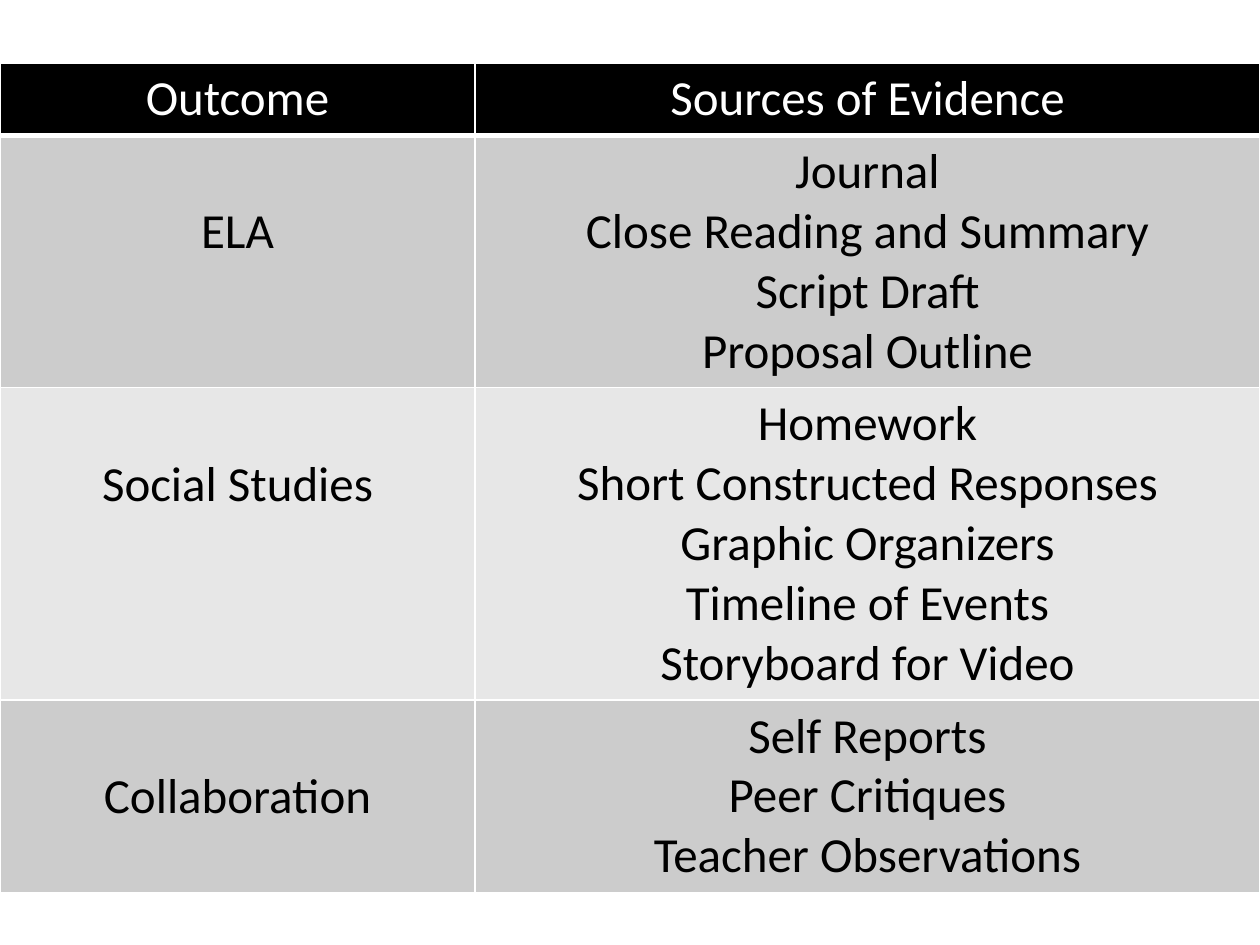
from dataclasses import dataclass

from pptx import Presentation
from pptx.dml.color import RGBColor
from pptx.enum.text import PP_ALIGN
from pptx.oxml import parse_xml
from pptx.oxml.ns import nsdecls
from pptx.slide import Slide
from pptx.util import Inches, Pt

COLORS = {
    "header": "000000",
    "header_text": "FFFFFF",
    "text": "000000",
    "odd": "CCCCCC",
    "even": "E7E7E7",
    "border": "FFFFFF",
}
COLUMN_WIDTHS = [3.77, 6.23]
ROW_HEIGHTS = [0.57, 2.0, 2.48, 1.52]
LINE_HEIGHT = 0.48
EVIDENCE = [
    ("Outcome", ["Sources of Evidence"]),
    ("ELA", ["Journal", "Close Reading and Summary", "Script Draft", "Proposal Outline"]),
    ("Social Studies", ["Homework", "Short Constructed Responses", "Graphic Organizers",
                        "Timeline of Events", "Storyboard for Video"]),
    ("Collaboration", ["Self Reports", "Peer Critiques", "Teacher Observations"]),
]


@dataclass
class EvidenceSlide:
    """Hold the style and the current slide, and draw its elements."""

    slide: Slide
    font: str = "Calibri"
    size: int = 28
    inset: float = 0.05

    def borders(self, cell, bottom):
        properties = cell._tc.get_or_add_tcPr()
        for side, width in (("L", 1), ("R", 1), ("T", 1), ("B", bottom)):
            properties.append(parse_xml(
                f'<a:ln{side} {nsdecls("a")} w="{Pt(width)}"><a:solidFill>'
                f'<a:srgbClr val="{COLORS["border"]}"/></a:solidFill></a:ln{side}>'))

    def cell(self, cell, lines, fill, color, lines_down=0, bottom=1):
        self.borders(cell, bottom)
        cell.fill.solid()
        cell.fill.fore_color.rgb = RGBColor.from_string(COLORS[fill])
        cell.margin_top = Inches(self.inset + lines_down * LINE_HEIGHT)
        cell.margin_bottom = Inches(self.inset)
        cell.text_frame.text = "\n".join(lines)
        for paragraph in cell.text_frame.paragraphs:
            paragraph.alignment = PP_ALIGN.CENTER
            for run in paragraph.runs:
                run.font.name = self.font
                run.font.size = Pt(self.size)
                run.font.bold = False
                run.font.color.rgb = RGBColor.from_string(COLORS[color])

    def table(self, left, top, rows):
        table = self.slide.shapes.add_table(
            len(rows), len(COLUMN_WIDTHS), Inches(left), Inches(top),
            Inches(sum(COLUMN_WIDTHS)), Inches(sum(ROW_HEIGHTS))).table
        for column, width in zip(table.columns, COLUMN_WIDTHS):
            column.width = Inches(width)
        for index, (outcome, sources) in enumerate(rows):
            table.rows[index].height = Inches(ROW_HEIGHTS[index])
            is_header = index == 0
            fill = "header" if is_header else "odd" if index % 2 else "even"
            color = "header_text" if is_header else "text"
            bottom = 3 if is_header else 1
            self.cell(table.cell(index, 0), [outcome], fill, color,
                      lines_down=0 if is_header else 1, bottom=bottom)
            self.cell(table.cell(index, 1), sources, fill, color, bottom=bottom)


def main():
    presentation = Presentation()
    presentation.slide_width = Inches(10)
    presentation.slide_height = Inches(7.5)
    blank_layout = presentation.slide_layouts[6]
    evidence_slide = EvidenceSlide(presentation.slides.add_slide(blank_layout))
    evidence_slide.table(0, 0.5, EVIDENCE)
    presentation.save("out.pptx")


if __name__ == "__main__":
    main()
